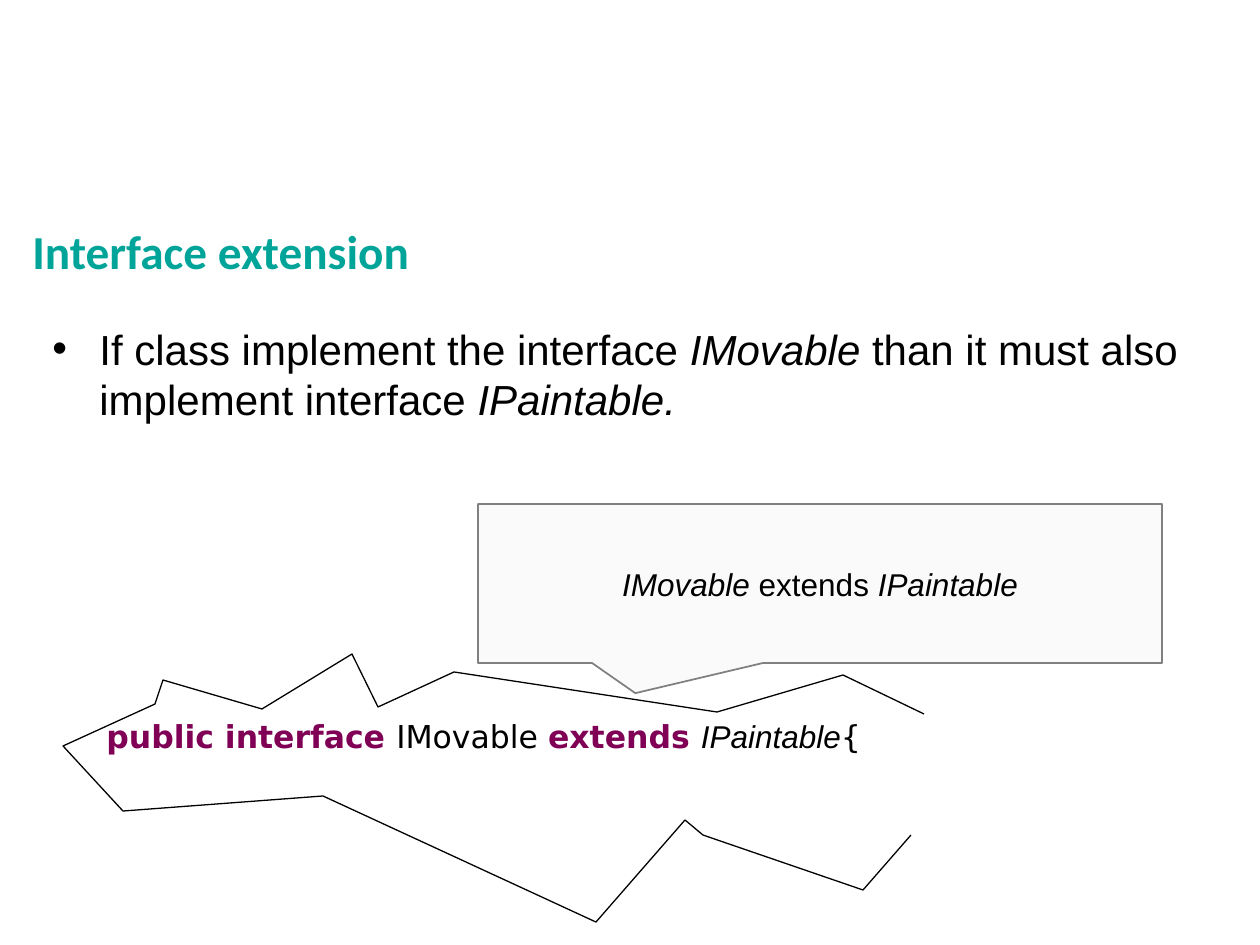
from lxml import etree
from pptx import Presentation
from pptx.dml.color import RGBColor
from pptx.enum.shapes import MSO_SHAPE
from pptx.enum.text import MSO_ANCHOR, PP_ALIGN
from pptx.oxml.ns import qn
from pptx.util import Pt

CALLOUT = MSO_SHAPE.RECTANGULAR_CALLOUT
MIDDLE, BOTTOM = MSO_ANCHOR.MIDDLE, MSO_ANCHOR.BOTTOM
CENTER = PP_ALIGN.CENTER
SCALE = 914400 / 126  # EMU in one px

COLORS = {"text": "000000", "keyword": "7F0055", "title": "00A499",
          "callout": "FAFAFA", "border": "808080"}
STYLES = {
    "plain": {"name": "Arial", "bold": False, "italic": False},
    "italic": {"name": "Arial", "bold": False, "italic": True},
    "code": {"name": "DejaVu Sans", "bold": False, "italic": False},
    "keyword": {"name": "DejaVu Sans", "bold": True, "italic": False},
    "title": {"name": "Calibri", "bold": True, "italic": False},
}


def px(n):
    return round(n * SCALE)


def fill_text(s, size, runs):
    """Write (text, style) runs into the first paragraph and return it."""
    s.text_frame.word_wrap = True
    p = s.text_frame.paragraphs[0]
    for text, style in runs:
        r = p.add_run()
        r.text = text
        r.font.size = Pt(size)
        r.font.color.rgb = RGBColor.from_string(COLORS.get(style, COLORS["text"]))
        for key, value in STYLES[style].items():
            setattr(r.font, key, value)
    return p


prs = Presentation()
prs.slide_width, prs.slide_height = px(1260), px(945)
shapes = prs.slides.add_slide(prs.slide_layouts[6]).shapes

# Bulleted statement
body = shapes.add_textbox(px(39), px(311), px(1181), px(158))
body.text_frame.margin_top = px(12)
p = fill_text(body, 24, [
    ("If class implement the interface ", "plain"), ("IMovable ", "italic"),
    ("than it must also implement interface ", "plain"), ("IPaintable.", "italic")])
pPr = p._p.get_or_add_pPr()
pPr.set("marL", str(px(48)))
pPr.set("indent", str(px(-47)))
etree.SubElement(pPr, qn("a:buFont"), typeface="Arial")
etree.SubElement(pPr, qn("a:buChar"), char="•")

# Code line
code = shapes.add_textbox(px(94), px(711), px(881), px(50))
fill_text(code, 18, [
    ("public interface ", "keyword"), ("IMovable ", "code"),
    ("extends ", "keyword"), ("IPaintable", "italic"), ("{", "code")])

# Callout
callout = shapes.add_shape(CALLOUT, px(478), px(504), px(684), px(159))
callout.shadow.inherit = False
callout.adjustments[0], callout.adjustments[1] = -0.27, 0.69
callout.fill.solid()
callout.fill.fore_color.rgb = RGBColor.from_string(COLORS["callout"])
callout.line.color.rgb = RGBColor.from_string(COLORS["border"])
callout.line.width = Pt(1)
callout.text_frame.vertical_anchor = MIDDLE
p = fill_text(callout, 18, [
    ("IMovable ", "italic"), ("extends ", "plain"), ("IPaintable", "italic")])
p.alignment = CENTER

# Torn outline around the code
outline = [(924, 714), (843, 675), (717, 712), (454, 672), (378, 707), (352, 654),
           (262, 709), (163, 680), (155, 704), (63, 746), (123, 811), (323, 796),
           (596, 922), (685, 820), (703, 835), (863, 890), (911, 835)]
builder = shapes.build_freeform(*outline[0], scale=SCALE)
builder.add_line_segments(outline[1:], close=False)
torn = builder.convert_to_shape()
torn.shadow.inherit = False
torn.fill.background()
torn.line.color.rgb = RGBColor.from_string(COLORS["text"])
torn.line.width = Pt(0.75)

# Title
title = shapes.add_textbox(px(20), px(145), px(1220), px(141))
title.text_frame.vertical_anchor = BOTTOM
p = fill_text(title, 27, [("Interface extension", "title")])
p.line_spacing = 0.9

prs.save("out.pptx")
